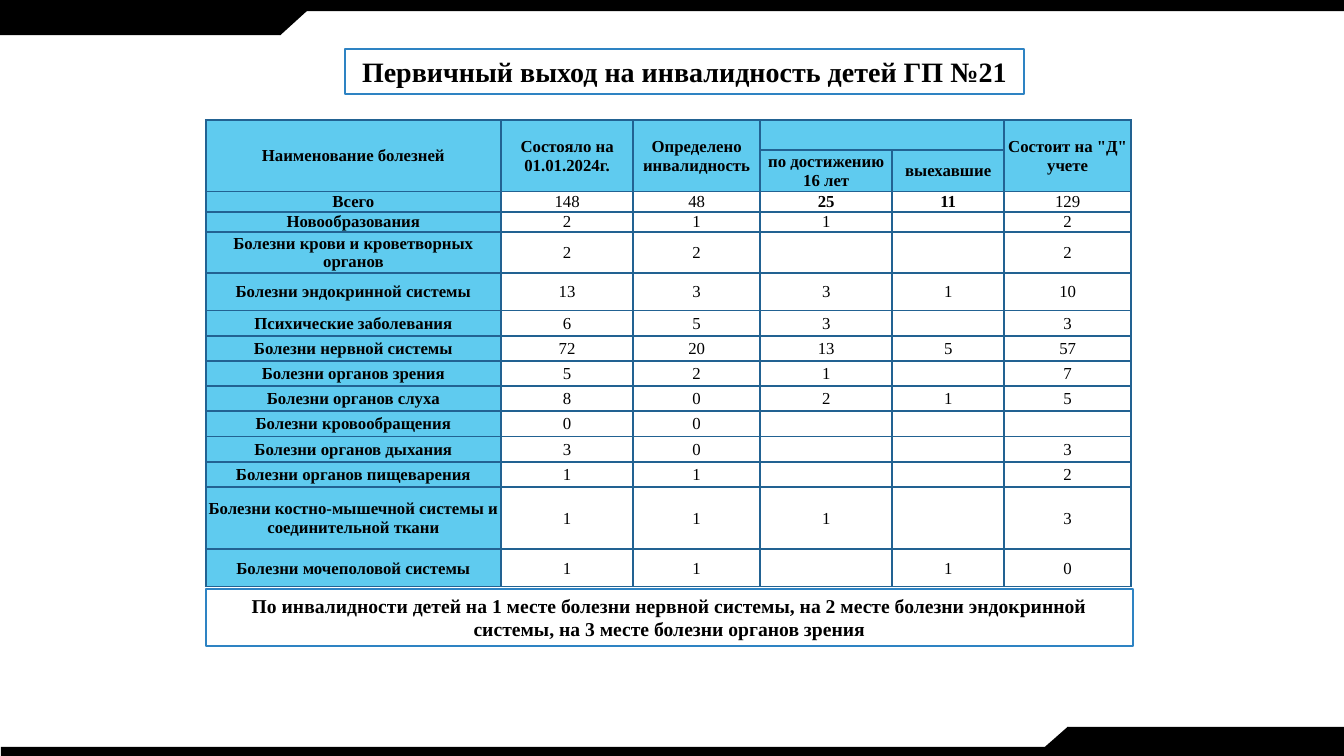
from lxml.etree import SubElement
from pptx import Presentation
from pptx.dml.color import RGBColor
from pptx.enum.shapes import MSO_SHAPE as Preset
from pptx.enum.text import MSO_ANCHOR as Anchor, MSO_AUTO_SIZE as AutoSize, PP_ALIGN as Align
from pptx.oxml.ns import qn
from pptx.util import Inches, Pt

BLACK, WHITE, SKY = "000000", "FFFFFF", "5FCBEF"
FRAME_BLUE, GRID_BLUE = "2E83C3", "226292"

TABLE_LEFT, TABLE_TOP, TABLE_WIDTH = 2.04, 1.19, 9.2
COLUMN_WIDTHS = [2.93, 1.31, 1.26, 1.31, 1.11, 1.26]
ROW_HEIGHTS = [0.3, 0.41, 0.2, 0.2, 0.41, 0.37] + [0.25] * 7 + [0.62, 0.37]
HEADER_ROWS = 2
MERGES = [(0, 0, 1, 0), (0, 1, 1, 1), (0, 2, 1, 2), (0, 3, 0, 4), (0, 5, 1, 5)]
BOLD_TOTALS = {(2, 3), (2, 4)}
DISEASES = [
    ["Наименование болезней", "Состояло на 01.01.2024г.", "Определено инвалидность",
     "", "", 'Состоит на "Д" учете'],
    ["", "", "", "по достижению 16 лет", "выехавшие", ""],
    ["Всего", "148", "48", "25", "11", "129"],
    ["Новообразования", "2", "1", "1", "", "2"],
    ["Болезни крови и кроветворных органов", "2", "2", "", "", "2"],
    ["Болезни эндокринной системы", "13", "3", "3", "1", "10"],
    ["Психические заболевания", "6", "5", "3", "", "3"],
    ["Болезни нервной системы", "72", "20", "13", "5", "57"],
    ["Болезни органов зрения", "5", "2", "1", "", "7"],
    ["Болезни органов слуха", "8", "0", "2", "1", "5"],
    ["Болезни кровообращения", "0", "0", "", "", ""],
    ["Болезни органов дыхания", "3", "0", "", "", "3"],
    ["Болезни органов пищеварения", "1", "1", "", "", "2"],
    ["Болезни костно-мышечной системы и соединительной ткани", "1", "1", "1", "", "3"],
    ["Болезни мочеполовой системы", "1", "1", "", "1", "0"],
]


def color(code):
    return RGBColor.from_string(code)


class Page:
    """Draws styled elements on one slide."""

    font_name = "Times New Roman"
    line_width = Pt(1.5)

    def __init__(self, deck):
        self.slide = deck.slides.add_slide(deck.slide_layouts[5])

    def label(self, frame, text, size, bold=True):
        frame.word_wrap = True
        para = frame.paragraphs[0]
        para.text = text
        para.alignment = Align.CENTER
        font = para.font
        font.name, font.size, font.bold = self.font_name, Pt(size), bold
        font.color.rgb = color(BLACK)

    def fill(self, target, code):
        target.fill.solid()
        target.fill.fore_color.rgb = color(code)

    def frame(self, box, text, size):
        self.fill(box, WHITE)
        box.line.color.rgb = color(FRAME_BLUE)
        box.line.width = self.line_width
        box.text_frame.auto_size = AutoSize.NONE
        box.text_frame.vertical_anchor = Anchor.MIDDLE
        self.label(box.text_frame, text, size)

    def shape(self, preset, left, top, width, height):
        shape = self.slide.shapes.add_shape(
            preset, Inches(left), Inches(top), Inches(width), Inches(height))
        shape.shadow.inherit = False
        return shape

    def ornament(self, preset, left, top, width, height, rotation=0):
        shape = self.shape(preset, left, top, width, height)
        shape.rotation = rotation
        self.fill(shape, BLACK)
        shape.line.fill.background()

    def title(self, left, top, width, height, text, size):
        box = self.slide.shapes.title
        box.left, box.top = Inches(left), Inches(top)
        box.width, box.height = Inches(width), Inches(height)
        self.frame(box, text, size)

    def note(self, left, top, width, height, text, size):
        self.frame(self.shape(Preset.RECTANGLE, left, top, width, height), text, size)

    def borders(self, cell):
        properties = cell._tc.get_or_add_tcPr()
        for side in ("a:lnL", "a:lnR", "a:lnT", "a:lnB"):
            line = SubElement(properties, qn(side), w=str(self.line_width))
            solid = SubElement(line, qn("a:solidFill"))
            SubElement(solid, qn("a:srgbClr"), val=GRID_BLUE)

    def cell(self, cell, text, size, bold, background):
        self.borders(cell)
        self.fill(cell, background)
        cell.margin_left = cell.margin_right = cell.margin_top = Inches(0.01)
        cell.margin_bottom = 0
        cell.vertical_anchor = Anchor.MIDDLE
        self.label(cell.text_frame, text, size, bold)

    def table(self, left, top, widths, heights, rows, size):
        table = self.slide.shapes.add_table(
            len(heights), len(widths), Inches(left), Inches(top),
            Inches(sum(widths)), Inches(sum(heights))).table
        table.first_row = table.horz_banding = False
        for column, width in zip(table.columns, widths):
            column.width = Inches(width)
        for row, height in zip(table.rows, heights):
            row.height = Inches(height)
        for r, texts in enumerate(rows):
            for c, text in enumerate(texts):
                heading = r < HEADER_ROWS or c == 0
                self.cell(table.cell(r, c), text, size,
                          heading or (r, c) in BOLD_TOTALS, SKY if heading else WHITE)
        for top_row, first, bottom_row, last in MERGES:
            table.cell(top_row, first).merge(table.cell(bottom_row, last))


def main():
    deck = Presentation()
    deck.slide_width, deck.slide_height = Inches(13.33), Inches(7.5)
    page = Page(deck)
    page.ornament(Preset.RECTANGLE, 0, 0, 13.33, 0.11)
    page.ornament(Preset.RECTANGLE, 0.01, 7.41, 13.32, 0.09)
    page.ornament(Preset.RECTANGLE, 0, 0.05, 2.78, 0.3)
    page.ornament(Preset.FLOWCHART_MERGE, 2.45, 0.05, 0.66, 0.3)
    page.ornament(Preset.RECTANGLE, 10.59, 7.21, 2.74, 0.29)
    page.ornament(Preset.FLOWCHART_MERGE, 10.26, 7.21, 0.66, 0.29, 180)
    page.title(3.42, 0.49, 6.74, 0.44, "Первичный выход на инвалидность детей ГП №21", 20)
    page.table(TABLE_LEFT, TABLE_TOP, COLUMN_WIDTHS, ROW_HEIGHTS, DISEASES, 12)
    page.note(TABLE_LEFT, 5.84, TABLE_WIDTH, 0.57,
              "По инвалидности детей на 1 месте болезни нервной системы, на 2 месте "
              "болезни эндокринной системы, на 3 месте болезни органов зрения", 14)
    deck.save("out.pptx")


if __name__ == "__main__":
    main()
